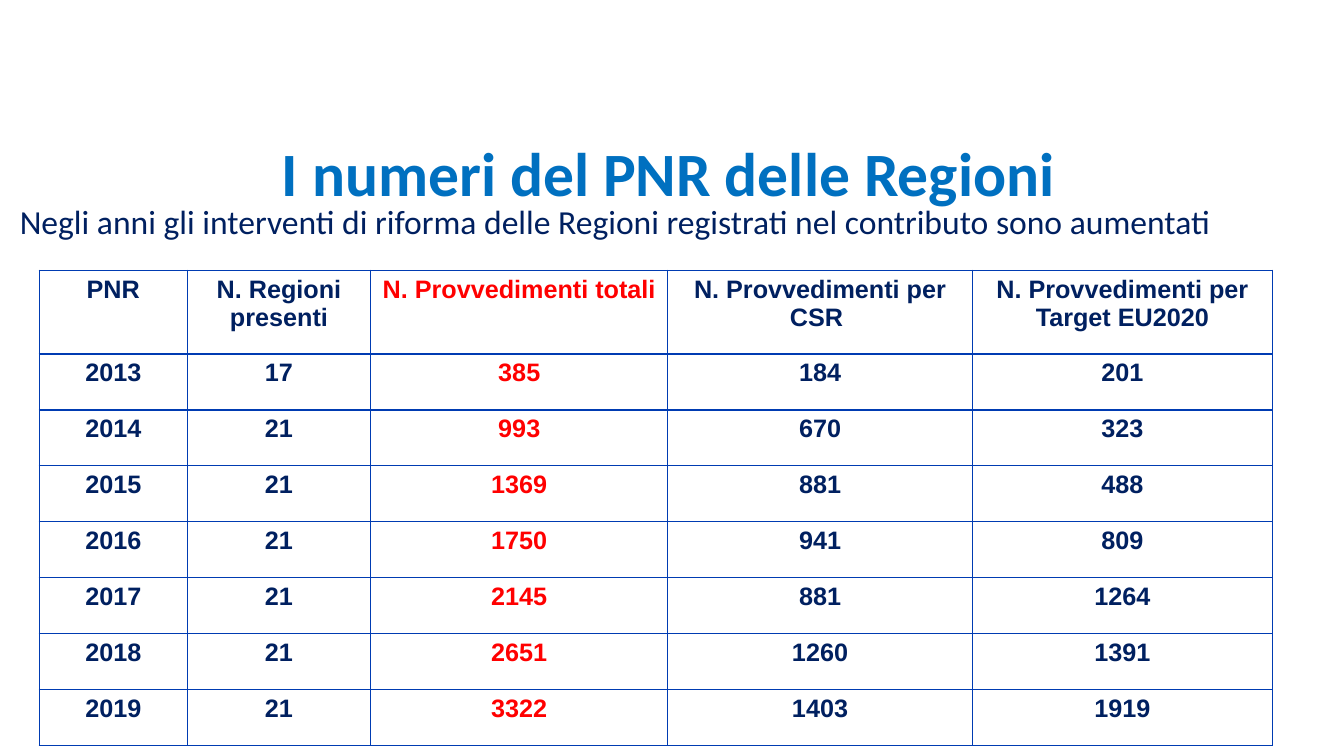
from lxml import etree
from pptx import Presentation
from pptx.dml.color import RGBColor
from pptx.enum.text import MSO_ANCHOR, PP_ALIGN
from pptx.oxml.ns import qn
from pptx.util import Cm, Pt

NAVY, RED, BLUE, BORDER = "002060", "FF0000", "0070C0", "003BB2"


def add_run(p, text, font, size, color, bold=False):
    r = p.add_run()
    r.text = text
    r.font.name, r.font.size, r.font.bold = font, Pt(size), bold
    r.font.color.rgb = RGBColor.from_string(color)


def set_borders(cell):
    tcPr = cell._tc.get_or_add_tcPr()
    for i, side in enumerate(("a:lnL", "a:lnR", "a:lnT", "a:lnB")):
        ln = etree.Element(qn(side), w=str(Pt(1)))
        fill = etree.SubElement(ln, qn("a:solidFill"))
        etree.SubElement(fill, qn("a:srgbClr"), val=BORDER)
        tcPr.insert(i, ln)  # borders come before the fill


prs = Presentation()
prs.slide_width, prs.slide_height = Cm(33.87), Cm(19.05)
s = prs.slides.add_slide(prs.slide_layouts[5])

# Table: measures per year
header = ["PNR", "N. Regioni presenti", "N. Provvedimenti totali",
          "N. Provvedimenti per CSR ", "N. Provvedimenti per Target EU2020"]
data = [
    (2013, 17, 385, 184, 201),
    (2014, 21, 993, 670, 323),
    (2015, 21, 1369, 881, 488),
    (2016, 21, 1750, 941, 809),
    (2017, 21, 2145, 881, 1264),
    (2018, 21, 2651, 1260, 1391),
    (2019, 21, 3322, 1403, 1919),
]
rows = [header, *data]
widths = [3.73, 4.62, 7.49, 7.67, 7.57]
heights = [2.11] + [1.41] * len(data)
table = s.shapes.add_table(len(rows), len(widths), Cm(0.99), Cm(6.81),
                           Cm(sum(widths)), Cm(sum(heights))).table
for col, width in zip(table.columns, widths):
    col.width = Cm(width)
for row, height, values in zip(table.rows, heights, rows):
    row.height = Cm(height)
    for i, (cell, value) in enumerate(zip(row.cells, values)):
        cell.fill.background()
        set_borders(cell)
        p = cell.text_frame.paragraphs[0]
        p.alignment = PP_ALIGN.CENTER
        add_run(p, str(value), "Arial", 18, RED if i == 2 else NAVY, True)

# Title
title = s.shapes.title
title.left, title.top, title.width, title.height = Cm(2.87), Cm(3.28), Cm(27.97), Cm(2.13)
tf = title.text_frame
tf.word_wrap = True
tf.vertical_anchor = MSO_ANCHOR.TOP
p = tf.paragraphs[0]
p.alignment = PP_ALIGN.CENTER
add_run(p, "I numeri del PNR delle Regioni", "Calibri", 44, BLUE, True)

# Subtitle
tf = s.shapes.add_textbox(Cm(0.25), Cm(4.95), Cm(31.47), Cm(1.27)).text_frame
tf.word_wrap = True
add_run(tf.paragraphs[0],
        "Negli anni gli interventi di riforma delle Regioni registrati nel contributo sono aumentati",
        "Calibri", 24, NAVY)

prs.save("out.pptx")
